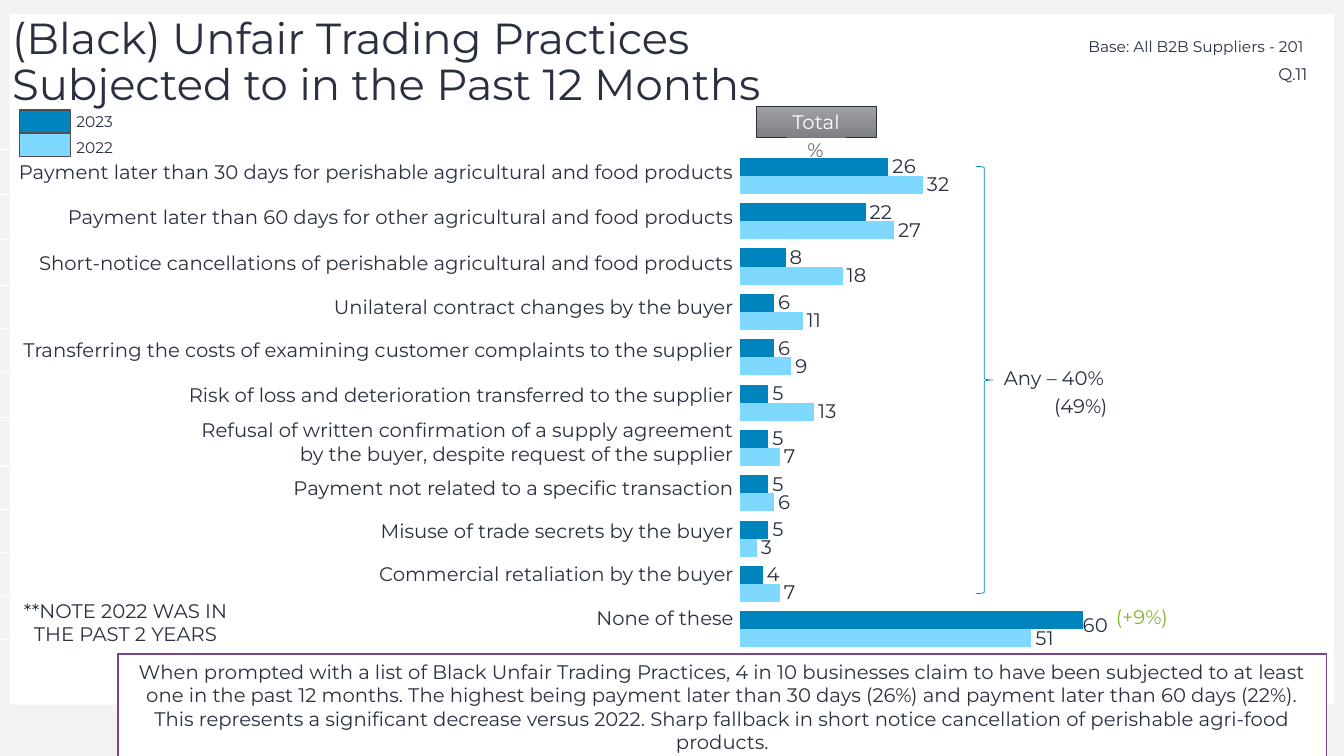
from dataclasses import dataclass

from pptx import Presentation
from pptx.chart.data import CategoryChartData
from pptx.dml.color import RGBColor
from pptx.enum.chart import XL_CHART_TYPE, XL_LABEL_POSITION
from pptx.enum.shapes import MSO_SHAPE
from pptx.enum.text import MSO_ANCHOR, MSO_AUTO_SIZE, PP_ALIGN
from pptx.oxml import parse_xml
from pptx.oxml.ns import nsdecls, qn
from pptx.util import Inches, Pt

FONT = "Montserrat"
INK = RGBColor(0x29, 0x30, 0x40)
WHITE = RGBColor(0xFF, 0xFF, 0xFF)
PALE = RGBColor(0xF2, 0xF2, 0xF2)
BLUE = RGBColor(0x00, 0x84, 0xBE)
SKY = RGBColor(0x7F, 0xD8, 0xFF)
PURPLE = RGBColor(0x78, 0x44, 0x92)
GREEN = RGBColor(0x81, 0xB5, 0x30)
GREY = RGBColor(0x64, 0x65, 0x63)
KEY_LINE = RGBColor(0x4E, 0x4F, 0x4E)
STEEL_TOP = RGBColor(0xA0, 0xA1, 0xA5)
STEEL_BOTTOM = RGBColor(0x7F, 0x81, 0x86)

LEFT, CENTER, RIGHT = PP_ALIGN.LEFT, PP_ALIGN.CENTER, PP_ALIGN.RIGHT
TOP, MIDDLE = MSO_ANCHOR.TOP, MSO_ANCHOR.MIDDLE

# Left, top, width, height in percent of the slide
Box = tuple[float, float, float, float]


@dataclass
class Label:
    text: str
    box: Box
    size: float = 14
    color: RGBColor = INK
    align: PP_ALIGN = LEFT
    anchor: MSO_ANCHOR = MIDDLE
    spacing: float = 1.0
    wrap: bool = True


@dataclass
class Panel:
    kind: MSO_SHAPE
    box: Box
    fill: RGBColor | None = None
    line: RGBColor | None = None
    line_width: float = 1


@dataclass
class Year:
    name: str
    color: RGBColor
    values: tuple[int, ...]


YEARS = [
    Year("2023", BLUE, (26, 22, 8, 6, 6, 5, 5, 5, 5, 4, 60)),
    Year("2022", SKY, (32, 27, 18, 11, 9, 13, 7, 6, 3, 7, 51)),
]
PRACTICES = [
    "Payment later than 30 days for perishable agricultural and food products",
    "Payment later than 60 days for other agricultural and food products",
    "Short-notice cancellations of perishable agricultural and food products",
    "Unilateral contract changes by the buyer",
    "Transferring the costs of examining customer complaints to the supplier",
    "Risk of loss and deterioration transferred to the supplier",
    "Refusal of written confirmation of a supply agreement\n"
    "by the buyer, despite request of the supplier",
    "Payment not related to a specific transaction",
    "Misuse of trade secrets by the buyer",
    "Commercial retaliation by the buyer",
    "None of these",
]
TALL_ROWS = {0, 1, 2, 5, 6}
TITLE = Label("(Black) Unfair Trading Practices Subjected to in the Past 12 Months",
              (0.15, 2.4, 66.3, 12), 31, spacing=0.9)
MESSAGE = Label(
    "When prompted with a list of Black Unfair Trading Practices, 4 in 10 businesses "
    "claim to have been subjected to at least one in the past 12 months. The highest "
    "being payment later than 30 days (26%) and payment later than 60 days (22%). "
    "This represents a significant decrease versus 2022. Sharp fallback in short "
    "notice cancellation of perishable agri-food products.",
    (8.78, 86.53, 89.93, 13.87), align=CENTER)
TOTAL = Label("Total", (56.25, 14.13, 8.93, 4), color=WHITE, align=CENTER)
LABELS = [
    Label("Q.11", (93.38, 7.73, 4.65, 4), 12, align=RIGHT),
    Label("Base: All B2B Suppliers - 201", (80.25, 4.53, 17.78, 3.87), 11,
          anchor=TOP, spacing=0.9),
    Label("%", (59.25, 17.6, 2.85, 4.53), color=GREY, align=CENTER, anchor=TOP, wrap=False),
    Label("Any – 40%", (73.95, 47.47, 10.05, 4.93)),
    Label("(49%)", (77.7, 51.2, 5.7, 4.93)),
    Label("(+9%)", (82.28, 79.07, 5.7, 4.93), color=GREEN),
    Label("**NOTE 2022 WAS IN THE PAST 2 YEARS", (0, 76.13, 18.68, 12.4), align=CENTER),
]
BACKDROP = [
    Panel(MSO_SHAPE.RECTANGLE, (0.6, 1.07, 98.78, 92.27), WHITE),
    Panel(MSO_SHAPE.RECTANGLE, (0, 93.2, 100, 6.8), PALE),
    Panel(MSO_SHAPE.FRAME, (0, 0.53, 100, 99.47), PALE),
]

prs = Presentation()
prs.slide_width, prs.slide_height = Inches(13.33), Inches(7.5)
slide = prs.slides.add_slide(prs.slide_layouts[5])
shapes = slide.shapes


def place(box: Box) -> tuple[int, int, int, int]:
    """Turn percent shares of the slide into lengths."""
    sides = (prs.slide_width, prs.slide_height) * 2
    left, top, width, height = (int(side * share / 100) for side, share in zip(sides, box))
    return left, top, width, height


def style_text(tf, label: Label) -> None:
    tf.text = label.text
    tf.vertical_anchor = label.anchor
    for p in tf.paragraphs:
        p.alignment, p.line_spacing = label.align, label.spacing
        for r in p.runs:
            r.font.name, r.font.size = FONT, Pt(label.size)
            r.font.color.rgb = label.color


def fill_frame(sp, label: Label) -> None:
    tf = sp.text_frame
    style_text(tf, label)
    tf.word_wrap = label.wrap
    tf.auto_size = MSO_AUTO_SIZE.NONE


def add_label(label: Label) -> None:
    fill_frame(shapes.add_textbox(*place(label.box)), label)


def add_panel(panel: Panel):
    sp = shapes.add_shape(panel.kind, *place(panel.box))
    sp.shadow.inherit = False
    if panel.fill is None:
        sp.fill.background()
    else:
        sp.fill.solid()
        sp.fill.fore_color.rgb = panel.fill
    if panel.line is None:
        sp.line.fill.background()
    else:
        sp.line.color.rgb = panel.line
        sp.line.width = Pt(panel.line_width)
    return sp


def manual_layout(inner: bool = False, **sizes: float):
    """Build a chart layout element; inner measures the plot without its axes."""
    target = '<c:layoutTarget val="inner"/>' if inner else ""
    modes = '<c:xMode val="edge"/><c:yMode val="edge"/>' if inner else ""
    parts = "".join(f'<c:{key} val="{value}"/>' for key, value in sizes.items())
    return parse_xml(f'<c:layout {nsdecls("c")}><c:manualLayout>{target}{modes}{parts}'
                     "</c:manualLayout></c:layout>")


def add_bars(box: Box) -> None:
    data = CategoryChartData()
    data.categories = [str(n + 1) for n in range(len(PRACTICES))]
    for year in YEARS:
        data.add_series(year.name, year.values)
    chart = shapes.add_chart(XL_CHART_TYPE.BAR_CLUSTERED, *place(box), data).chart
    chart.has_title = chart.has_legend = False
    chart.font.name, chart.font.size = FONT, Pt(14)
    chart.font.color.rgb = INK
    chart.category_axis.visible = chart.value_axis.visible = False
    chart.category_axis.reverse_order = True
    chart.value_axis.has_major_gridlines = False
    chart.value_axis.minimum_scale, chart.value_axis.maximum_scale = 0, 60
    plot = chart.plots[0]
    plot.gap_width, plot.overlap, plot.vary_by_categories = 50, 0, False
    for series, year in zip(plot.series, YEARS):
        series.format.fill.solid()
        series.format.fill.fore_color.rgb = year.color
        series.data_labels.show_value = True
        series.data_labels.position = XL_LABEL_POSITION.OUTSIDE_END
    longest = plot.series[0]
    longest.points[10].data_label.position = XL_LABEL_POSITION.OUTSIDE_END
    longest._element.find(".//" + qn("c:dLbl")).insert(1, manual_layout(x=-0.01, y=0.01))
    area = chart._chartSpace.find(".//" + qn("c:plotArea"))
    for old in area.findall(qn("c:layout")):
        area.remove(old)
    area.insert(0, manual_layout(inner=True, x=0, y=0.02, w=0.82, h=0.98))


def add_practices(box: Box) -> None:
    table = shapes.add_table(len(PRACTICES), 1, *place(box)).table
    table.first_row = table.horz_banding = False
    for i, practice in enumerate(PRACTICES):
        table.rows[i].height = int(prs.slide_height * (0.06 if i in TALL_ROWS else 0.0573))
        cell = table.cell(i, 0)
        cell.fill.background()
        cell.margin_left = cell.margin_right = cell.margin_top = Inches(0.01)
        cell.margin_bottom = 0
        cell.vertical_anchor = MIDDLE
        style_text(cell.text_frame, Label(practice, box, align=RIGHT))


def main() -> None:
    slide.background.fill.solid()
    slide.background.fill.fore_color.rgb = PALE
    for panel in BACKDROP:
        sp = add_panel(panel)
    sp.adjustments[0] = 0.013
    fill_frame(add_panel(Panel(MSO_SHAPE.RECTANGLE, MESSAGE.box, WHITE, PURPLE)), MESSAGE)

    title = shapes.title
    title.left, title.top, title.width, title.height = place(TITLE.box)
    fill_frame(title, TITLE)
    shapes._spTree.append(title._element)

    add_bars((55.05, 18.93, 31.13, 67.33))
    add_practices((-1.58, 19.73, 56.25, 65.07))
    total = add_panel(Panel(MSO_SHAPE.RECTANGLE, TOTAL.box, line=INK, line_width=0.5))
    total.fill.gradient()
    total.fill.gradient_angle = 270
    for stop, color in zip(total.fill.gradient_stops, (STEEL_TOP, STEEL_BOTTOM)):
        stop.color.rgb = color
    fill_frame(total, TOTAL)
    add_panel(Panel(MSO_SHAPE.RIGHT_BRACE, (72.6, 22, 1.28, 56.53), line=BLUE, line_width=0.5))
    for i, year in enumerate(YEARS):
        add_panel(Panel(MSO_SHAPE.RECTANGLE, (1.43, 14.53 + i * 3.07, 3.83, 3.07),
                        year.color, KEY_LINE))
        add_label(Label(year.name, (4.95, 14.4 + i * 3.47, 7.13, 3.47), 11,
                        anchor=TOP, spacing=0.9))
    for label in LABELS:
        add_label(label)
    prs.save("out.pptx")


if __name__ == "__main__":
    main()
